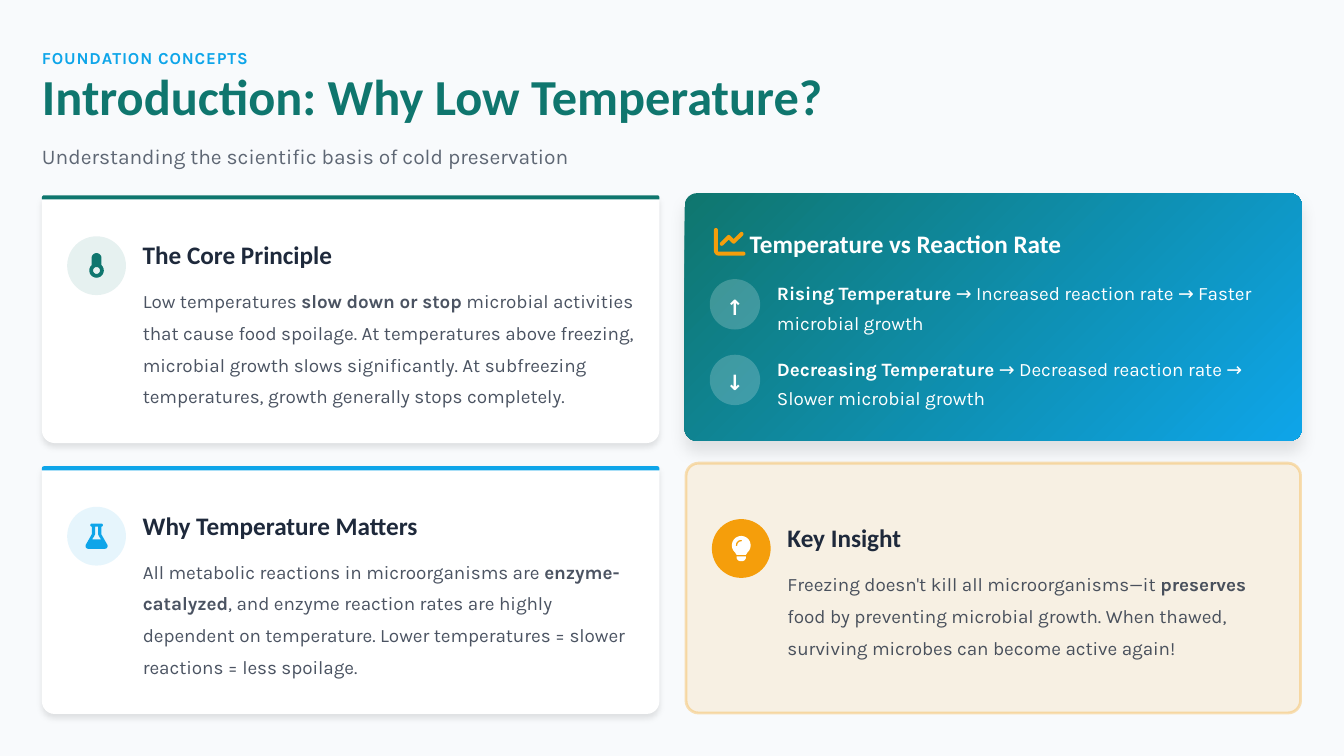
"""Build the slide that introduces why low temperature preserves food."""
from dataclasses import dataclass
from math import cos, radians, sin

from lxml.etree import SubElement
from pptx import Presentation
from pptx.dml.color import RGBColor
from pptx.dml.fill import FillFormat
from pptx.enum.shapes import MSO_SHAPE
from pptx.enum.text import MSO_ANCHOR, PP_ALIGN
from pptx.oxml.ns import qn
from pptx.shapes.autoshape import Shape
from pptx.slide import Slide
from pptx.util import Pt

TEAL, SKY, AMBER, INK, WHITE = "0F766E", "0EA5E9", "F59E0B", "1E293B", "FFFFFF"
CARD_WIDTH, CARD_HEIGHT, BADGE_SIZE, ROW_BADGE_SIZE = 441, 177, 42, 36

Point = tuple[float, float]
Contour = list[Point]
Box = tuple[float, float, float, float]


@dataclass
class TextStyle:
    font: dict
    color: str
    line_spacing: float
    opacity: int = 100
    tracking: int = 0
    alignment: PP_ALIGN = PP_ALIGN.LEFT


@dataclass
class Icon:
    width: float
    contours: list[Contour]


@dataclass
class Topic:
    left: float
    top: float
    badge_color: str
    badge_opacity: int
    icon: Icon
    icon_color: str
    title: str
    body: list[str]
    body_width: float
    body_height: float


@dataclass
class ReactionRow:
    arrow: str
    runs: list[str]


def text_format(name: str, size: float, bold: bool = False) -> dict:
    return {"name": name, "size": Pt(size), "bold": bold}


EYEBROW = TextStyle(text_format("Karla", 12, True), SKY, 1.3, tracking=60)
HEADLINE = TextStyle(text_format("Calibri", 36, True), TEAL, 0.8)
SUBTITLE = TextStyle(text_format("Karla", 15), INK, 1.2, opacity=70)
TITLE = TextStyle(text_format("Calibri", 18, True), INK, 1.1)
BODY = TextStyle(text_format("Karla", 13.5), INK, 1.4, opacity=80)
RATE_TITLE = TextStyle(text_format("Calibri", 18, True), WHITE, 1.1)
RATE_BODY = TextStyle(text_format("Karla", 13.5), WHITE, 1.3)
ARROW = TextStyle(text_format("Karla", 15, True), WHITE, 1.2, alignment=PP_ALIGN.CENTER)


def paint(fill: FillFormat, color: str, opacity: int = 100, end_color: str = "") -> None:
    if end_color:
        fill.gradient()
        fill.gradient_angle = 315
        for stop, stop_color in zip(fill.gradient_stops, (color, end_color)):
            stop.color.rgb = RGBColor.from_string(stop_color)
        return
    fill.solid()
    fill.fore_color.rgb = RGBColor.from_string(color)
    if opacity < 100:
        color_element = fill._xPr.find(".//" + qn("a:srgbClr"))
        SubElement(color_element, qn("a:alpha"), val=str(opacity * 1000))


def add_shadow(shape: Shape, blur: float, distance: float) -> None:
    effects = shape._element.spPr.find(qn("a:effectLst"))
    shadow = SubElement(effects, qn("a:outerShdw"), blurRad=str(Pt(blur)),
                        dist=str(Pt(distance)), dir="5400000", algn="ctr", rotWithShape="0")
    color_element = SubElement(shadow, qn("a:srgbClr"), val="000000")
    SubElement(color_element, qn("a:alpha"), val="10000")


def add_preset(slide: Slide, kind: MSO_SHAPE, box: Box, color: str, opacity: int = 100,
               end_color: str = "", corners: tuple[float, ...] = ()) -> Shape:
    shape = slide.shapes.add_shape(kind, *map(Pt, box))
    shape.shadow.inherit = False
    shape.line.fill.background()
    paint(shape.fill, color, opacity, end_color)
    for index, radius in enumerate(corners):
        shape.adjustments[index] = radius / min(box[2:])
    return shape


def add_text(slide: Slide, box: Box, runs: list[str], style: TextStyle, bold_run: int = -1) -> None:
    frame = slide.shapes.add_textbox(*map(Pt, box)).text_frame
    frame_format = {"word_wrap": True, "vertical_anchor": MSO_ANCHOR.MIDDLE, "margin_left": 0,
                    "margin_top": 0, "margin_right": 0, "margin_bottom": 0}
    for name, value in frame_format.items():
        setattr(frame, name, value)
    paragraph = frame.paragraphs[0]
    paragraph.alignment = style.alignment
    paragraph.line_spacing = style.line_spacing
    for index, text in enumerate(runs):
        run = paragraph.add_run()
        run.text = text
        for name, value in style.font.items():
            setattr(run.font, name, value)
        if index == bold_run:
            run.font.bold = True
        paint(run.font.fill, style.color, style.opacity)
        if style.tracking:
            run._r.get_or_add_rPr().set("spc", str(style.tracking))


def arc(x: float, y: float, radius: float, start: float, end: float) -> Contour:
    angles = [radians(start + (end - start) * step / 16) for step in range(17)]
    return [(x + radius * cos(angle), y + radius * sin(angle)) for angle in angles]


THERMOMETER = Icon(11.2, [
    arc(5.6, 3.5, 3.5, 180, 360) + arc(5.6, 12.4, 5.2, -48, 228),
    arc(5.6, 12.4, 2.5, 0, 360)])
FLASK = Icon(15.8, [
    arc(4.5, 1.1, 1.1, 90, 270) + arc(11.3, 1.1, 1.1, -90, 90) + [(11.3, 7.6)]
    + arc(13.8, 16, 2, -30, 90) + arc(2, 16, 2, 90, 210) + [(4.5, 7.6)],
    [(6.8, 2.2), (9, 2.2), (9, 7.6), (9.6, 9), (11.1, 11.3), (4.7, 11.3), (6.2, 9), (6.8, 7.6)]])
CHART = Icon(22.5, [
    arc(1.4, 2.8, 1.4, 180, 360) + arc(3.5, 17.6, 0.7, 180, 90)
    + arc(21.1, 19.7, 1.4, -90, 90) + arc(3.5, 17.6, 3.5, 90, 180),
    arc(19.7, 5.6, 1.4, 225, 405) + [(15.05, 12.2), (14.06, 12.6), (13.07, 12.2), (10.55, 9.7)]
    + arc(5.6, 12.65, 1.4, 45, 225) + [(9.55, 6.7), (10.55, 6.3), (11.5, 6.7), (14.06, 9.26)]])
BULB = Icon(13.5, [
    arc(6.75, 6.75, 6.75, 130, 410) + [(10.1, 13.5), (3.4, 13.5)],
    [(3.4, 14.6), (10.1, 14.6)] + arc(7.3, 15.2, 2.8, 0, 90) + arc(6.2, 15.2, 2.8, 90, 180),
    arc(6.75, 6.75, 3.94, 180, 270) + arc(6.75, 3.4, 0.56, -90, 90)
    + arc(6.75, 6.75, 2.8, 270, 180) + arc(3.4, 6.75, 0.56, 0, 180)])

TOPICS = [
    Topic(48, 168.8, TEAL, 10, THERMOMETER, TEAL, "The Core Principle",
          ["Low temperatures ", "slow down or stop",
           " microbial activities that cause food spoilage. At temperatures above freezing, "
           "microbial growth slows significantly. At subfreezing temperatures, growth generally "
           "stops completely."], 358, 88),
    Topic(48, 362, SKY, 10, FLASK, SKY, "Why Temperature Matters",
          ["All metabolic reactions in microorganisms are ", "enzyme-catalyzed",
           ", and enzyme reaction rates are highly dependent on temperature. "
           "Lower temperatures = slower reactions = less spoilage."], 358, 88),
    Topic(508.5, 370.8, AMBER, 100, BULB, WHITE, "Key Insight",
          ["Freezing doesn't kill all microorganisms—it ", "preserves",
           " food by preventing microbial growth. When thawed, surviving microbes can become "
           "active again!"], 355, 66)]
REACTION_ROWS = [
    ReactionRow("↑", ["Rising Temperature",
                      " → Increased reaction rate → Faster microbial growth"]),
    ReactionRow("↓", ["Decreasing Temperature",
                      " → Decreased reaction rate → Slower microbial growth"])]


def add_icon(slide: Slide, icon: Icon, left: float, top: float, color: str) -> None:
    contours = [[(Pt(x), Pt(y)) for x, y in contour] for contour in icon.contours]
    builder = slide.shapes.build_freeform(*contours[0][0])
    for index, contour in enumerate(contours):
        if index:
            builder.move_to(*contour[0])
        builder.add_line_segments(contour[1:], close=True)
    shape = builder.convert_to_shape(Pt(left), Pt(top))
    shape.shadow.inherit = False
    shape.line.fill.background()
    paint(shape.fill, color)


def add_accent_card(slide: Slide, top: float, accent: str) -> None:
    kind = MSO_SHAPE.ROUND_2_SAME_RECTANGLE
    card = add_preset(slide, kind, (30, top, CARD_WIDTH, CARD_HEIGHT), WHITE, corners=(3, 9))
    add_shadow(card, 4.5, 3)
    add_preset(slide, kind, (30, top, CARD_WIDTH, 3), accent, corners=(1.5, 0))


def add_topic(slide: Slide, topic: Topic) -> None:
    add_preset(slide, MSO_SHAPE.OVAL, (topic.left, topic.top, BADGE_SIZE, BADGE_SIZE),
               topic.badge_color, topic.badge_opacity)
    add_icon(slide, topic.icon, topic.left + (BADGE_SIZE - topic.icon.width) / 2,
             topic.top + 12, topic.icon_color)
    text_left = topic.left + 54
    add_text(slide, (text_left, topic.top, 360, 24), [topic.title], TITLE)
    add_text(slide, (text_left, topic.top + 33, topic.body_width, topic.body_height),
             topic.body, BODY, bold_run=1)


def add_reaction_card(slide: Slide) -> None:
    card = add_preset(slide, MSO_SHAPE.ROUNDED_RECTANGLE, (489, 138, CARD_WIDTH, CARD_HEIGHT),
                      TEAL, end_color=SKY, corners=(9,))
    add_shadow(card, 11.2, 7.5)
    add_icon(slide, CHART, 510, 161.5, AMBER)
    add_text(slide, (535.5, 160.5, 385, 24), ["Temperature vs Reaction Rate"], RATE_TITLE)
    for index, row in enumerate(REACTION_ROWS):
        top = 199.4 + 54 * index
        add_preset(slide, MSO_SHAPE.OVAL, (507, top, ROW_BADGE_SIZE, ROW_BADGE_SIZE), WHITE, 20)
        add_text(slide, (503.4, top, 43.2, ROW_BADGE_SIZE), [row.arrow], ARROW)
        add_text(slide, (555, top - 3, 363.6, 42), row.runs, RATE_BODY, bold_run=0)


def main() -> None:
    presentation = Presentation()
    presentation.slide_width, presentation.slide_height = Pt(960), Pt(540)
    slide = presentation.slides.add_slide(presentation.slide_layouts[6])
    paint(slide.background.fill, "F8FAFC")
    add_text(slide, (30, 30, 906, 18), ["FOUNDATION CONCEPTS"], EYEBROW)
    add_text(slide, (30, 54, 918, 36), ["Introduction: Why Low Temperature?"], HEADLINE)
    add_text(slide, (30, 99, 907, 21),
             ["Understanding the scientific basis of cold preservation"], SUBTITLE)
    add_accent_card(slide, 139.5, TEAL)
    add_accent_card(slide, 333, SKY)
    add_reaction_card(slide)
    insight = add_preset(slide, MSO_SHAPE.ROUNDED_RECTANGLE, (490, 330.8, 439, 178.5),
                         AMBER, 10, corners=(9,))
    insight.line.width = Pt(2)
    paint(insight.line.fill, AMBER, 30)
    for topic in TOPICS:
        add_topic(slide, topic)
    presentation.save("out.pptx")


if __name__ == "__main__":
    main()
